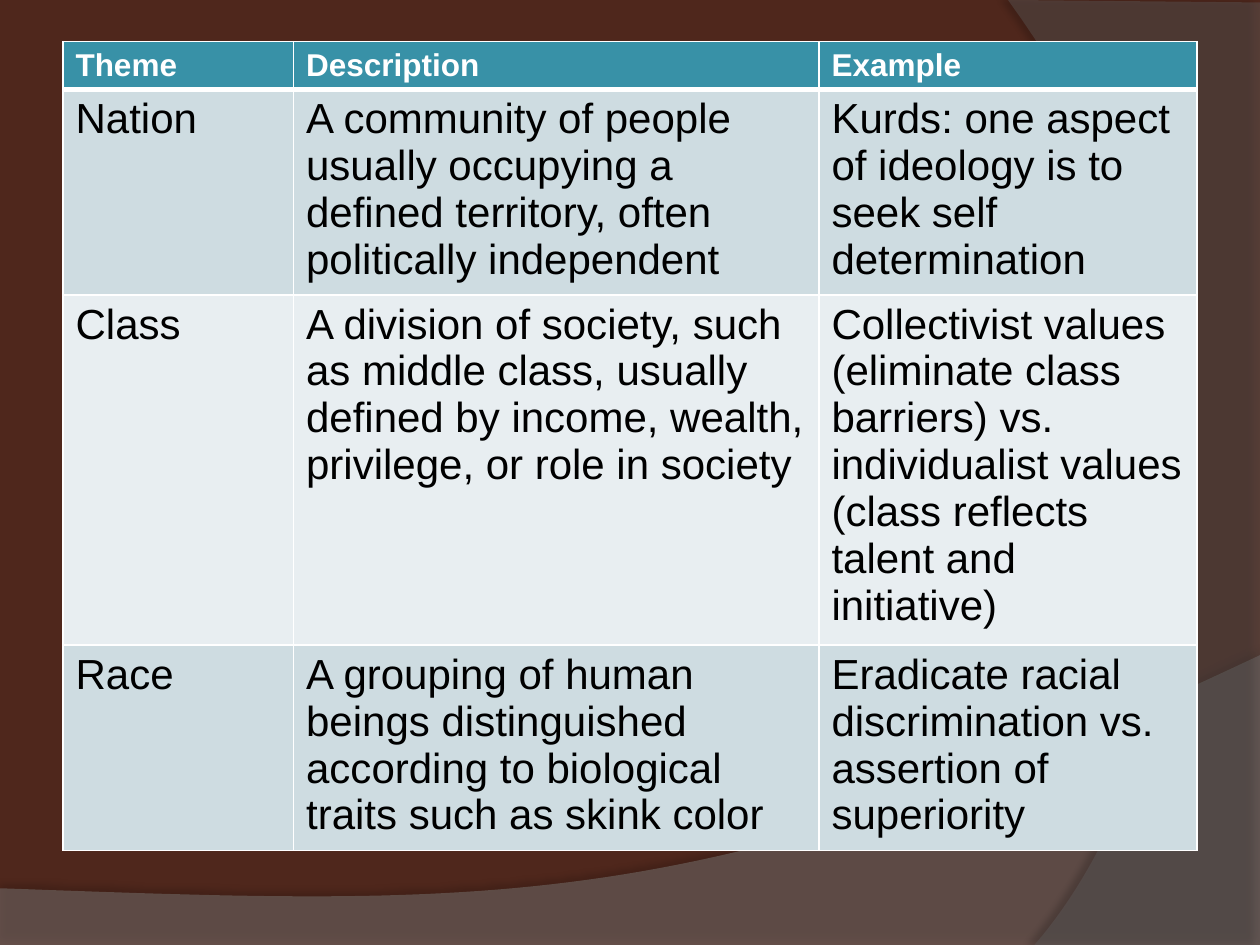
"""Build a table slide of ideological themes over two soft waves."""
from typing import NamedTuple

from lxml import etree
from pptx import Presentation, util as u
from pptx.dml.color import RGBColor
from pptx.oxml import ns

COLS, ROWS = 100, 75
UNIT = u.Inches(0.1)
HEX = {"back": "4F271C", "wave": "7F7F7F", "side": "5E5E5E", "head": "3891A7",
       "odd": "CEDCE1", "even": "E8EEF1", "white": "FFFFFF", "black": "000000"}
HEAD = {"size": u.Pt(18), "bold": True, "name": "Arial"}
BODY = {"size": u.Pt(24), "bold": False, "name": "Arial"}
WIDTHS = (18.3, 41.7, 30)
HEIGHTS = (3.8, 16.3, 27.8, 16.3)


class Wave(NamedTuple):
    color: str
    alpha: int
    curve: tuple
    ends: tuple
    shade: int
    dist: float
    angle: int


class Theme(NamedTuple):
    name: str
    about: str
    case: str


WAVES = (
    Wave("wave", 45, ((COLS, 52), (55.9, 72.9), (39.1, 71.9), (0, 70.5)),
         ((0, ROWS), (COLS, ROWS)), 35, 3.5, 270),
    Wave("side", 40, ((82.1, ROWS), (93.5, 61.9), (101.8, 30), (80, 0)),
         ((COLS, 0.2), (COLS, ROWS)), 45, 4, 180),
)
THEMES = (
    Theme("Theme", "Description", "Example"),
    Theme("Nation",
          "A community of people usually occupying a defined territory, "
          "often politically independent",
          "Kurds: one aspect of ideology is to seek self determination"),
    Theme("Class",
          "A division of society, such as middle class, usually defined by "
          "income, wealth, privilege, or role in society",
          "Collectivist values (eliminate class barriers) vs. individualist "
          "values (class reflects talent and initiative)"),
    Theme("Race",
          "A grouping of human beings distinguished according to biological "
          "traits such as skink color",
          "Eradicate racial discrimination vs. assertion of superiority"),
)


def rgb(key: str) -> RGBColor:
    """Look up a colour."""
    return RGBColor.from_string(HEX[key])


def grid(num: float) -> int:
    """Turn grid units into a length."""
    return round(num * UNIT)


def add(root, tag: str, **attrs):
    """Append a drawing element."""
    vals = {key: str(val) for key, val in attrs.items()}
    return etree.SubElement(root, ns.qn(tag), vals)


def bend(curve: tuple, steps: int = 60) -> list:
    """Sample a cubic curve."""
    out = []
    for step in range(steps + 1):
        t = step / steps
        mix = ((1 - t) ** 3, 3 * t * (1 - t) ** 2, 3 * t * t * (1 - t), t ** 3)
        out.append(tuple(sum(m * p[axis] for m, p in zip(mix, curve))
                         for axis in (0, 1)))
    return out


def draw_wave(slide, wave: Wave) -> None:
    """Draw one translucent wave with its shadow."""
    dots = [(grid(x), grid(y)) for x, y in (*bend(wave.curve), *wave.ends)]
    pen = slide.shapes.build_freeform(*dots[0])
    pen.add_line_segments(dots[1:], close=True)
    form = pen.convert_to_shape()
    form.shadow.inherit = False
    form.line.fill.background()
    form.fill.solid()
    form.fill.fore_color.rgb = rgb(wave.color)
    props = form.element.spPr
    tint = props.find(".//" + ns.qn("a:srgbClr"))
    add(tint, "a:alpha", val=wave.alpha * 1000)
    glow = add(props.find(ns.qn("a:effectLst")), "a:outerShdw",
               blurRad=u.Pt(4), dist=u.Pt(wave.dist), dir=wave.angle * 60000,
               algn="ctr", rotWithShape=0)
    dark = add(glow, "a:srgbClr", val=HEX["black"])
    add(dark, "a:alpha", val=wave.shade * 1000)


def edge(cell, row: int) -> None:
    """Give a cell white borders, thick below the header."""
    props = cell._tc.get_or_add_tcPr()
    sides = {"L": 1, "R": 1, "T": 3 if row == 1 else 1, "B": 1 if row else 3}
    for spot, (side, width) in enumerate(sides.items()):
        line = add(props, f"a:ln{side}", w=u.Pt(width))
        add(add(line, "a:solidFill"), "a:srgbClr", val=HEX["white"])
        props.insert(spot, line)


def fill_cell(cell, words: str, row: int) -> None:
    """Write and style one cell."""
    cell.text = words
    font = cell.text_frame.paragraphs[0].runs[0].font
    for key, val in (BODY if row else HEAD).items():
        setattr(font, key, val)
    font.color.rgb = rgb("black" if row else "white")
    cell.fill.solid()
    band = "odd" if row % 2 else "even"
    cell.fill.fore_color.rgb = rgb(band if row else "head")
    edge(cell, row)


def draw_table(slide, themes: tuple) -> None:
    """Draw the table of themes."""
    box = map(grid, (5, 3.3, sum(WIDTHS), sum(HEIGHTS)))
    table = slide.shapes.add_table(len(themes), len(WIDTHS), *box).table
    table.horz_banding = False
    for col, width in zip(table.columns, WIDTHS):
        col.width = grid(width)
    for row, (theme, height) in enumerate(zip(themes, HEIGHTS)):
        table.rows[row].height = grid(height)
        for col, words in enumerate(theme):
            fill_cell(table.cell(row, col), words, row)


def main() -> None:
    """Build and save the deck."""
    deck = Presentation()
    deck.slide_width, deck.slide_height = grid(COLS), grid(ROWS)
    slide = deck.slides.add_slide(deck.slide_layouts[6])
    slide.background.fill.solid()
    slide.background.fill.fore_color.rgb = rgb("back")
    for wave in WAVES:
        draw_wave(slide, wave)
    draw_table(slide, THEMES)
    deck.save("out.pptx")


if __name__ == "__main__":
    main()
